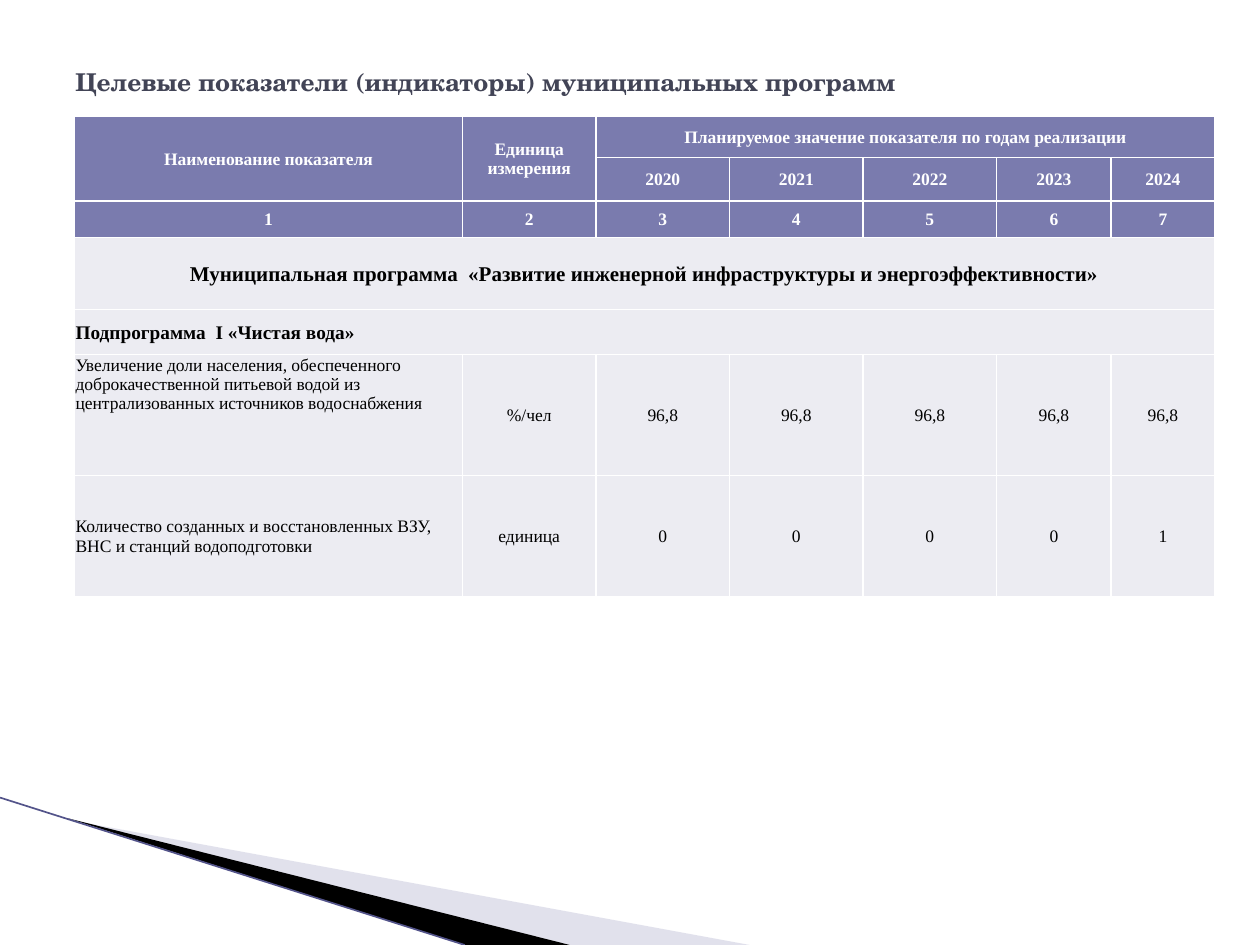
from lxml.etree import SubElement
from pptx import Presentation
from pptx.dml.color import RGBColor
from pptx.enum.shapes import MSO_CONNECTOR as Connector
from pptx.enum.text import MSO_ANCHOR as Anchor, PP_ALIGN as Align
from pptx.oxml.ns import qn
from pptx.util import Inches, Pt

COLORS = {"heading": "424456", "header": "7A7BAE", "body": "ECECF2", "white": "FFFFFF",
          "black": "000000", "haze": "B6B6D1", "edge": "53548A"}
SERIF, SCHOOL = "Times New Roman", "TeX Gyre Schola"
SLIDE_W, SLIDE_H = Inches(10), Inches(7.5)
COLUMN_SHARES = [3.08, 1.06, 1.06, 1.06, 1.06, 0.91, 0.82]
ROW_SHARES = [0.33, 0.32, 0.29, 0.57, 0.36, 0.96, 0.96]
HEADER_ROWS = 3
INDICATORS = [
    ["Наименование показателя", "Единица измерения",
     "Планируемое значение показателя по годам реализации", "", "", "", ""],
    ["", "", "2020", "2021", "2022", "2023", "2024"],
    ["1", "2", "3", "4", "5", "6", "7"],
    ["Муниципальная программа  «Развитие инженерной инфраструктуры и энергоэффективности»"]
    + [""] * 6,
    ["Подпрограмма  I «Чистая вода»"] + [""] * 6,
    ["Увеличение доли населения, обеспеченного доброкачественной питьевой водой "
     "из централизованных источников водоснабжения", "%/чел"] + ["96,8"] * 5,
    ["Количество созданных и восстановленных ВЗУ, ВНС и станций водоподготовки",
     "единица", "0", "0", "0", "0", "1"],
]
MERGES = [(0, 0, 1, 0), (0, 1, 1, 1), (0, 2, 0, 6), (3, 0, 3, 6), (4, 0, 4, 6)]


def rgb(name):
    """Return the named palette colour."""
    return RGBColor.from_string(COLORS[name])


def place(box, x, y):
    """Turn shares of a box into a slide position."""
    left, top, width, height = box
    return int(left + x * width), int(top + y * height)


def write(frame, text, *, size, color, font=SERIF, bold=False, align=Align.LEFT):
    """Put formatted text in a text frame."""
    frame.word_wrap = True
    paragraph = frame.paragraphs[0]
    paragraph.alignment = align
    run = paragraph.add_run()
    run.text = text
    run.font.name, run.font.size, run.font.bold = font, Pt(size), bold
    run.font.color.rgb = rgb(color)


def draw_wedge(slide, box, points, color, opacity=100):
    """Fill an outline given in shares of the box."""
    start, *others = [place(box, x, y) for x, y in points]
    builder = slide.shapes.build_freeform(*start)
    builder.add_line_segments(others, close=True)
    wedge = builder.convert_to_shape()
    wedge.shadow.inherit = False
    wedge.fill.solid()
    wedge.fill.fore_color.rgb = rgb(color)
    wedge.line.fill.background()
    if opacity < 100:
        tint = wedge.fill._xPr.find(f".//{qn('a:srgbClr')}")
        SubElement(tint, qn("a:alpha"), val=str(opacity * 1000))


def draw_corner(slide, box):
    """Draw the slanted wedges and their edge line at the bottom left."""
    draw_wedge(slide, box, [(0.09, 0.15), (1, 1), (0.76, 1)], "haze", 40)
    draw_wedge(slide, box, [(0.09, 0.14), (0.76, 1), (0.62, 1)], "black")
    edge = slide.shapes.add_connector(Connector.STRAIGHT, *place(box, 0, 0),
                                      *place(box, 0.62, 1))
    edge.line.color.rgb = rgb("edge")
    edge.line.width = Pt(0.95)
    SubElement(edge._element.spPr, qn("a:effectLst"))


def draw_title(slide, box):
    """Write the slide heading."""
    frame = slide.shapes.add_textbox(*box).text_frame
    frame.vertical_anchor = Anchor.MIDDLE
    write(frame, "Целевые показатели (индикаторы) муниципальных программ",
          size=14, color="heading", font=SCHOOL, bold=True)


def style_cell(cell, fill):
    """Give a cell its borders, insets and fill."""
    properties = cell._tc.get_or_add_tcPr()
    for side in ("L", "R", "T", "B"):
        border = SubElement(properties, qn(f"a:ln{side}"), w=str(Pt(1)))
        paint = SubElement(border, qn("a:solidFill"))
        SubElement(paint, qn("a:srgbClr"), val=COLORS["white"])
    cell.margin_left = cell.margin_right = cell.margin_top = Inches(0.01)
    cell.margin_bottom = 0
    cell.fill.solid()
    cell.fill.fore_color.rgb = rgb(fill)


def cell_format(row, column):
    """Choose the text format for a table position."""
    is_header = row < HEADER_ROWS
    is_left = column == 0 and row > HEADER_ROWS
    return {"size": {3: 12, 4: 11}.get(row, 10), "bold": row < 5,
            "color": "white" if is_header else "black",
            "align": Align.LEFT if is_left else Align.CENTER}


def draw_indicators(slide, box):
    """Build the table of programme indicators."""
    left, top, width, height = box
    table = slide.shapes.add_table(len(ROW_SHARES), len(COLUMN_SHARES), *box).table
    table.first_row = table.horz_banding = False
    for column, share in zip(table.columns, COLUMN_SHARES):
        column.width = int(width * share / sum(COLUMN_SHARES))
    for row, share in zip(table.rows, ROW_SHARES):
        row.height = int(height * share / sum(ROW_SHARES))
    for r, labels in enumerate(INDICATORS):
        for c, label in enumerate(labels):
            cell = table.cell(r, c)
            style_cell(cell, "header" if r < HEADER_ROWS else "body")
            cell.vertical_anchor = Anchor.TOP if (r, c) == (5, 0) else Anchor.MIDDLE
            if label:
                write(cell.text_frame, label, **cell_format(r, c))
    for r, c, last_r, last_c in MERGES:
        table.cell(r, c).merge(table.cell(last_r, last_c))


def region(x, y, width, height):
    """Return a box given in shares of the slide."""
    return (int(x * SLIDE_W), int(y * SLIDE_H), int(width * SLIDE_W), int(height * SLIDE_H))


def main():
    """Assemble and save the slide."""
    deck = Presentation()
    deck.slide_width, deck.slide_height = SLIDE_W, SLIDE_H
    slide = deck.slides.add_slide(deck.slide_layouts[6])
    draw_corner(slide, region(0, 0.844, 0.595, 0.156))
    draw_title(slide, region(0.05, 0.04, 0.9, 0.092))
    draw_indicators(slide, region(0.059, 0.123, 0.905, 0.505))
    deck.save("out.pptx")


if __name__ == "__main__":
    main()
